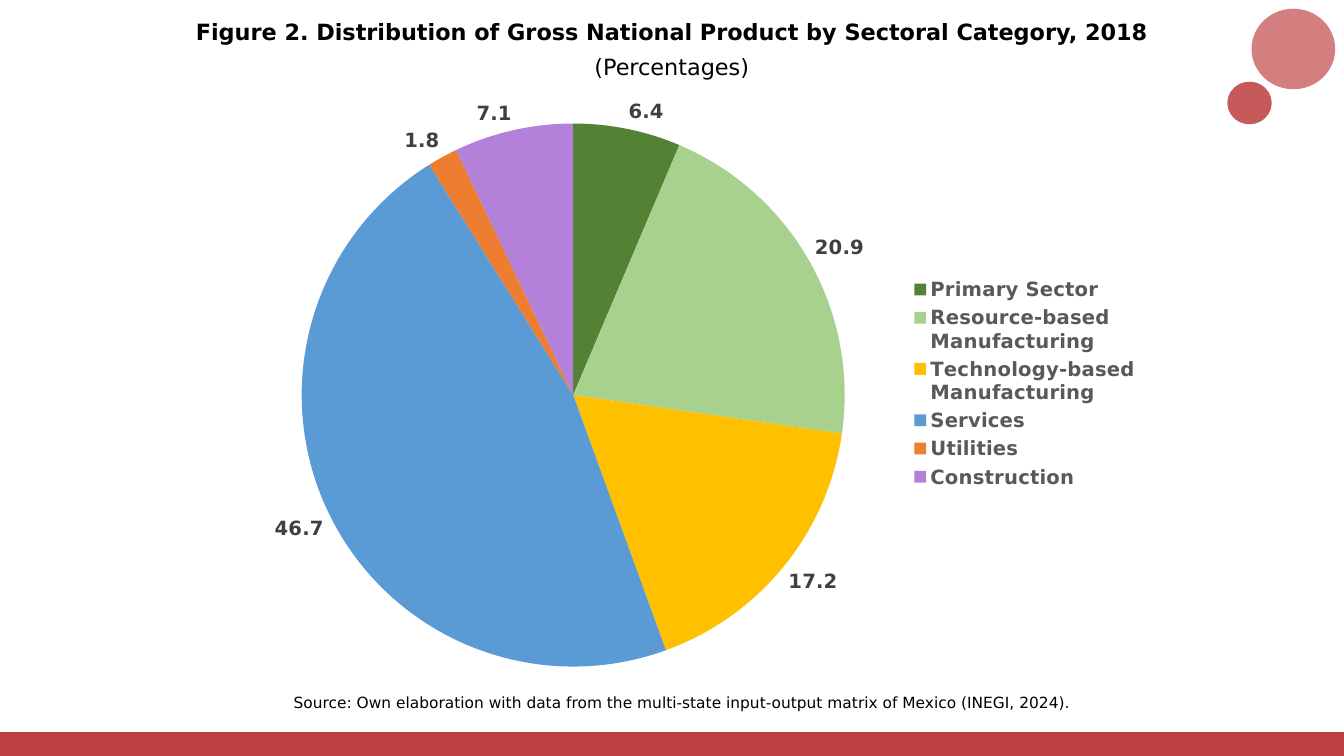
from lxml.etree import SubElement
from pptx import Presentation
from pptx.chart.data import CategoryChartData
from pptx.dml.color import RGBColor
from pptx.enum.chart import XL_CHART_TYPE as ChartType
from pptx.enum.chart import XL_LABEL_POSITION as LabelPosition
from pptx.enum.chart import XL_LEGEND_POSITION as LegendPosition
from pptx.enum.shapes import MSO_SHAPE as Shape
from pptx.enum.text import PP_ALIGN as Align
from pptx.oxml import parse_xml
from pptx.oxml.ns import nsdecls, qn
from pptx.util import Cm, Pt

FONT = "DejaVu Sans"
RED = "A80000"
SECTORS = [
    ("Primary Sector", 6.4, "548235"),
    ("Resource-based Manufacturing", 20.9, "A9D18E"),
    ("Technology-based Manufacturing", 17.2, "FFC000"),
    ("Services", 46.7, "5B9BD5"),
    ("Utilities", 1.8, "ED7D31"),
    ("Construction", 7.1, "B381D9"),
]


def color(hex_value):
    return RGBColor.from_string(hex_value)


def style_font(font, size, hex_value, bold=False):
    font.name = FONT
    font.size = Pt(size)
    font.bold = bold
    font.color.rgb = color(hex_value)


def add_decoration(page, kind, left, top, width, height, opacity):
    shape = page.shapes.add_shape(kind, Cm(left), Cm(top), Cm(width), Cm(height))
    shape.shadow.inherit = False
    shape.line.fill.background()
    shape.fill.solid()
    shape.fill.fore_color.rgb = color(RED)
    red = shape.fill._xPr.find(".//" + qn("a:srgbClr"))
    SubElement(red, qn("a:alpha"), val=str(opacity * 1000))


def add_caption(page, text, left, top, width, height, size, bold=False):
    box = page.shapes.add_textbox(Cm(left), Cm(top), Cm(width), Cm(height))
    box.text_frame.word_wrap = True
    para = box.text_frame.paragraphs[0]
    para.text = text
    para.alignment = Align.CENTER
    para.line_spacing = 1.5
    para.space_after = Pt(8)
    style_font(para.font, size, "000000", bold)


def manual_layout(x, y, w, h, target=""):
    """Layout element with fractions of the chart area."""
    sizes = "".join(f'<c:{name} val="{value}"/>'
                    for name, value in zip("xywh", (x, y, w, h)))
    return parse_xml(
        f'<c:layout {nsdecls("c")}><c:manualLayout>{target}'
        '<c:xMode val="edge"/><c:yMode val="edge"/>'
        f'{sizes}</c:manualLayout></c:layout>')


def add_sector_pie(page, left, top, width, height):
    names, values, fills = zip(*SECTORS)
    data = CategoryChartData(number_format="#,##0.0")
    data.categories = names
    data.add_series("Series 1", values)
    chart = page.shapes.add_chart(ChartType.PIE, Cm(left), Cm(top),
                                  Cm(width), Cm(height), data).chart
    chart.has_title = False
    style_font(chart.font, 14, "000000", True)

    # Slices
    plot = chart.plots[0]
    plot.vary_by_categories = True
    for index, fill in enumerate(fills):
        slice_fill = plot.series[0].points[index].format.fill
        slice_fill.solid()
        slice_fill.fore_color.rgb = color(fill)

    # Value labels
    plot.has_data_labels = True
    labels = plot.data_labels
    labels.show_value = True
    labels.show_percentage = False
    labels.number_format = "#,##0.0"
    labels.number_format_is_linked = False
    labels.position = LabelPosition.OUTSIDE_END
    style_font(labels.font, 14, "404040", True)

    # Legend
    chart.has_legend = True
    legend = chart.legend
    legend.position = LegendPosition.RIGHT
    legend.include_in_layout = False
    style_font(legend.font, 14, "595959", True)

    # Placement of pie and legend
    area = chart._chartSpace.find(".//" + qn("c:plotArea"))
    for layout in area.findall(qn("c:layout")):
        area.remove(layout)
    area.insert(0, manual_layout(0.08, 0.07, 0.59, 0.91,
                                 '<c:layoutTarget val="inner"/>'))
    legend_xml = chart._chartSpace.find(".//" + qn("c:legend"))
    for layout in legend_xml.findall(qn("c:layout")):
        legend_xml.remove(layout)
    legend_xml.find(qn("c:legendPos")).addnext(
        manual_layout(0.74, 0.32, 0.25, 0.37))


def main():
    deck = Presentation()
    deck.slide_width, deck.slide_height = Cm(33.87), Cm(19.05)
    page = deck.slides.add_slide(deck.slide_layouts[6])

    # Corner circles and bottom band
    add_decoration(page, Shape.OVAL, 31.54, 0.22, 2.11, 2.03, 50)
    add_decoration(page, Shape.OVAL, 30.93, 2.06, 1.12, 1.07, 65)
    add_decoration(page, Shape.RECTANGLE, 0, 18.45, 33.87, 0.6, 75)

    # Titles and source
    add_caption(page, "Figure 2. Distribution of Gross National Product by "
                "Sectoral Category, 2018", 4.55, 0, 24.77, 1.14, 16, True)
    add_caption(page, "(Percentages)", 8.46, 0.88, 16.94, 1.14, 16)
    add_caption(page, "Source: Own elaboration with data from the multi-state "
                "input-output matrix of Mexico (INEGI, 2024).",
                1.27, 17.12, 31.85, 0.86, 11)

    # Chart
    add_sector_pie(page, 5.74, 2.06, 23.22, 15.04)
    deck.save("out.pptx")


if __name__ == "__main__":
    main()
